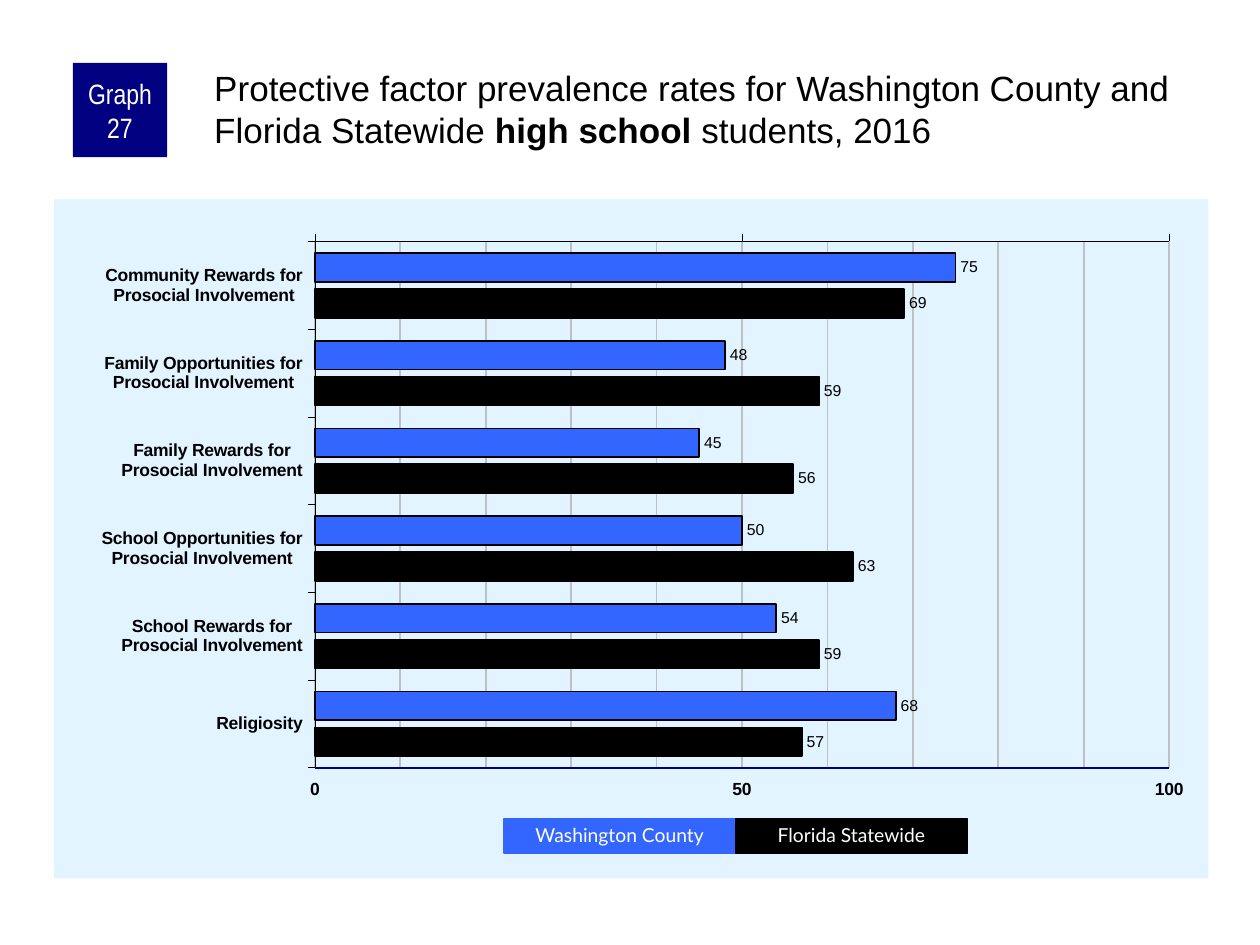
from collections import namedtuple
from copy import deepcopy

from lxml import etree
from pptx import Presentation
from pptx import util as u
from pptx.chart.data import CategoryChartData
from pptx.dml.color import RGBColor
from pptx.enum import chart as charts, shapes, text
from pptx.oxml import parse_xml
from pptx.oxml.ns import nsdecls, qn

Box = namedtuple("Box", "left top width height")

COLORS = {
    "navy": "000080",
    "county": "3366FF",
    "state": "000000",
    "panel": "E1F4FF",
    "grid": "C0C0C0",
    "black": "000000",
    "white": "FFFFFF",
}
PROSOCIAL = "Prosocial Involvement"
RATES = [
    (f"Community Rewards for\n{PROSOCIAL}", 75, 69),
    (f"Family Opportunities for\n{PROSOCIAL}", 48, 59),
    (f"Family Rewards for\n{PROSOCIAL}", 45, 56),
    (f"School Opportunities for\n{PROSOCIAL}", 50, 63),
    (f"School Rewards for\n{PROSOCIAL}", 54, 59),
    ("Religiosity", 68, 57),
]
GROUPS = [("Washington County", "county"), ("Florida Statewide", "state")]
# Plot area as fractions of the chart
PLOT = Box(0.226, 0.062, 0.74, 0.775)


def color(name):
    return RGBColor.from_string(COLORS[name])


def in_cm(box):
    return [u.Cm(length) for length in box]


def set_font(font, size, name="Arial", tint="black", bold=False):
    font.size, font.name, font.bold = u.Pt(size), name, bold
    font.color.rgb = color(tint)


def set_line(line, tint, width):
    line.color.rgb = color(tint)
    line.width = u.Pt(width)


def add_text(paragraph, content, **font_format):
    run = paragraph.add_run()
    run.text = content
    set_font(run.font, **font_format)


def add_label_box(slide, box, content, fill, outlined=False, spacing=None, **font_format):
    """Filled rectangle with centred text."""
    shape = slide.shapes.add_shape(shapes.MSO_SHAPE.RECTANGLE, *in_cm(box))
    shape.shadow.inherit = False
    shape.fill.solid()
    shape.fill.fore_color.rgb = color(fill)
    if outlined:
        set_line(shape.line, fill, 0.75)
    else:
        shape.line.fill.background()
    frame = shape.text_frame
    frame.word_wrap = True
    frame.vertical_anchor = text.MSO_ANCHOR.MIDDLE
    frame.margin_left = frame.margin_right = u.Cm(0.13)
    frame.margin_top = frame.margin_bottom = 0
    paragraph = frame.paragraphs[0]
    paragraph.alignment = text.PP_ALIGN.CENTER
    paragraph.line_spacing = spacing
    add_text(paragraph, content, tint="white", **font_format)


def add_header(slide, box):
    """Graph number at the left, title beside it."""
    badge = Box(box.left, box.top, 1.9, 1.9)
    add_label_box(slide, badge, "Graph 27", "navy", size=16, name="Arial Narrow")

    indent = 2.77
    title = slide.shapes.add_textbox(
        *in_cm(Box(box.left + indent, box.top, box.width - indent, box.height)))
    frame = title.text_frame
    frame.word_wrap = True
    frame.margin_left = frame.margin_top = u.Cm(0.08)
    frame.margin_right = frame.margin_bottom = 0
    paragraph = frame.paragraphs[0]
    add_text(paragraph, "Protective factor prevalence rates for Washington County "
                        "and Florida Statewide ", size=20)
    add_text(paragraph, "high school ", size=20, bold=True)
    add_text(paragraph, "students, 2016", size=20)


def style_chart_area(chart):
    """Panel fill and fixed plot area."""
    chart_space = chart.element
    chart_space.find(qn("c:chart")).addnext(parse_xml(
        f'<c:spPr {nsdecls("c", "a")}><a:solidFill><a:srgbClr val="{COLORS["panel"]}"/>'
        '</a:solidFill><a:ln><a:noFill/></a:ln></c:spPr>'))
    plot_area = chart_space.find(".//" + qn("c:plotArea"))
    for layout in plot_area.findall(qn("c:layout")):
        plot_area.remove(layout)
    layout = parse_xml(f'<c:layout {nsdecls("c")}><c:manualLayout/></c:layout>')
    settings = [("layoutTarget", "inner"), ("xMode", "edge"), ("yMode", "edge"),
                *zip("xywh", PLOT)]
    for tag, value in settings:
        etree.SubElement(layout[0], qn(f"c:{tag}")).set("val", str(value))
    plot_area.insert(0, layout)


def style_axes(chart):
    category_axis, value_axis = chart.category_axis, chart.value_axis
    for axis in (category_axis, value_axis):
        set_font(axis.tick_labels.font, 10, bold=True)
        set_line(axis.format.line, "black", 0.25)
        axis.major_tick_mark = charts.XL_TICK_MARK.OUTSIDE
        axis.minor_tick_mark = charts.XL_TICK_MARK.NONE
    category_axis.reverse_order = True
    value_axis.tick_label_position = charts.XL_TICK_LABEL_POSITION.HIGH
    value_axis.minimum_scale, value_axis.maximum_scale = 0, 100
    value_axis.major_unit, value_axis.minor_unit = 50, 10

    # Minor gridlines take the format of the major ones
    value_axis.has_major_gridlines = value_axis.has_minor_gridlines = True
    set_line(value_axis.major_gridlines.format.line, "grid", 1)
    axis_element = chart.element.find(".//" + qn("c:valAx"))
    major = axis_element.find(qn("c:majorGridlines"))
    minor = axis_element.find(qn("c:minorGridlines"))
    minor.append(deepcopy(major.find(qn("c:spPr"))))


def add_rate_chart(slide, box):
    data = CategoryChartData()
    names, *group_values = zip(*RATES)
    data.categories = names
    for (group, _), values in zip(GROUPS, group_values):
        data.add_series(group, values)
    chart = slide.shapes.add_chart(
        charts.XL_CHART_TYPE.BAR_CLUSTERED, *in_cm(box), data).chart
    chart.has_title = chart.has_legend = False
    set_font(chart.font, 11.8)
    style_chart_area(chart)
    style_axes(chart)

    # Bars and their values
    plot = chart.plots[0]
    plot.vary_by_categories = False
    plot.gap_width, plot.overlap = 80, -25
    for series, (_, tint) in zip(plot.series, GROUPS):
        series.format.fill.solid()
        series.format.fill.fore_color.rgb = color(tint)
        set_line(series.format.line, "black", 1)
        labels = series.data_labels
        labels.show_value = True
        labels.position = charts.XL_LABEL_POSITION.OUTSIDE_END
        set_font(labels.font, 9)

    # Navy baseline along the bottom of the plot
    left = box.left + PLOT.left * box.width
    right = left + PLOT.width * box.width
    bottom = box.top + (PLOT.top + PLOT.height) * box.height
    baseline = slide.shapes.add_connector(
        shapes.MSO_CONNECTOR.STRAIGHT, *in_cm((left, bottom, right, bottom)))
    set_line(baseline.line, "navy", 1)
    etree.SubElement(baseline.element.spPr, qn("a:effectLst"))


def add_legend(slide, box):
    width = box.width / len(GROUPS)
    for index, (group, tint) in enumerate(GROUPS):
        key = Box(box.left + index * width, box.top, width, box.height)
        add_label_box(slide, key, group, tint, outlined=True, spacing=0.9,
                      size=11, name="Lato")


def main():
    presentation = Presentation()
    presentation.slide_width, presentation.slide_height = u.Cm(25.4), u.Cm(19.05)
    slide = presentation.slides.add_slide(presentation.slide_layouts[6])
    add_rate_chart(slide, Box(1.09, 4.02, 23.27, 13.69))
    add_header(slide, Box(1.47, 1.27, 22.89, 2.11))
    add_legend(slide, Box(10.16, 16.51, 9.34, 0.69))
    presentation.save("out.pptx")


if __name__ == "__main__":
    main()
